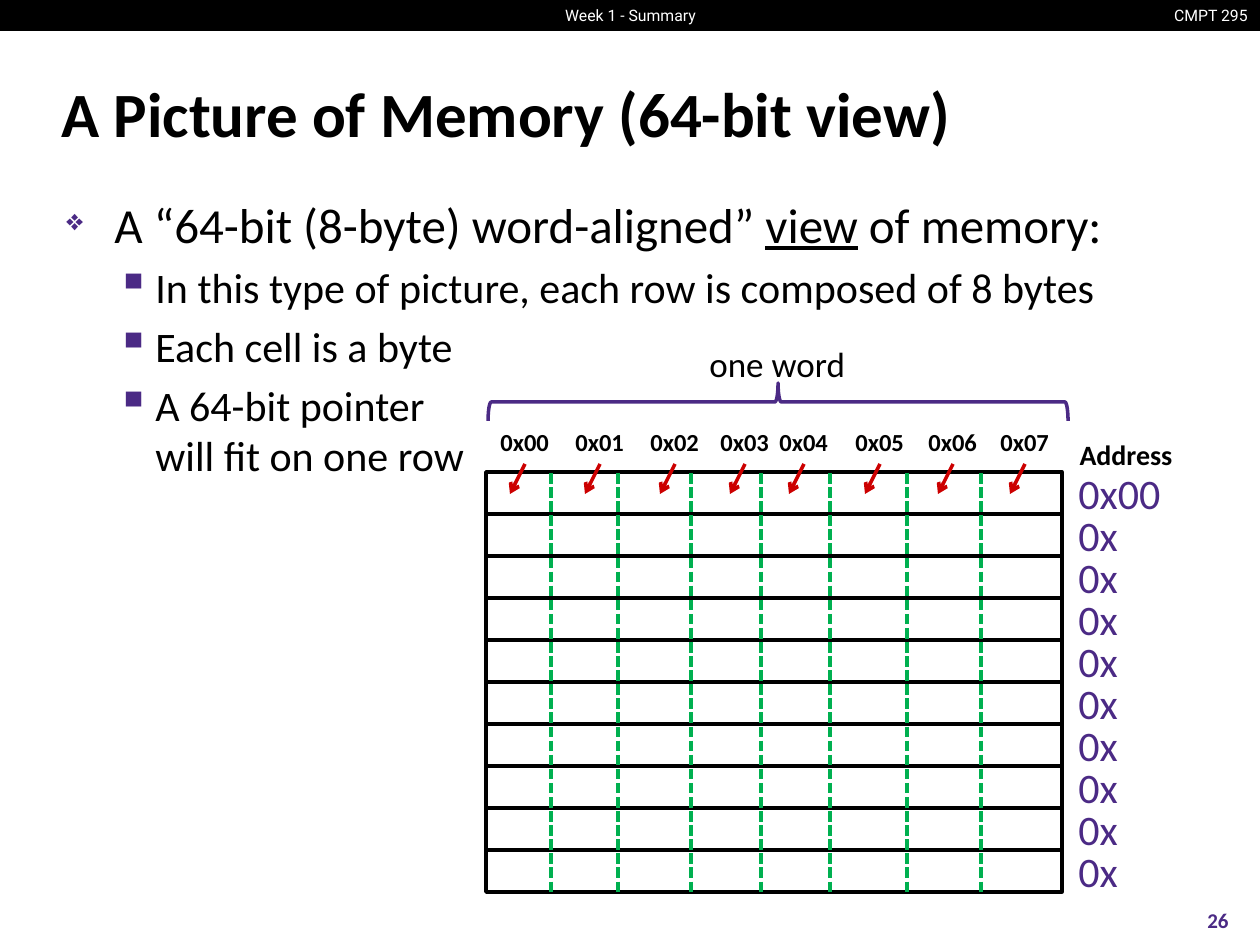
from lxml import etree
from pptx import Presentation
from pptx.dml.color import RGBColor
from pptx.enum.dml import MSO_LINE
from pptx.enum.shapes import MSO_CONNECTOR, MSO_SHAPE
from pptx.enum.text import MSO_ANCHOR, MSO_AUTO_SIZE, PP_ALIGN
from pptx.oxml.ns import qn
from pptx.util import Pt

EMU_PER_PX = 914400 / 126

BLACK = RGBColor(0x00, 0x00, 0x00)
WHITE = RGBColor(0xFF, 0xFF, 0xFF)
PURPLE = RGBColor(0x4B, 0x2A, 0x85)
GREEN = RGBColor(0x00, 0xB0, 0x50)
RED = RGBColor(0xCC, 0x00, 0x00)

LEFT, CENTER, RIGHT = PP_ALIGN.LEFT, PP_ALIGN.CENTER, PP_ALIGN.RIGHT
TOP, MIDDLE = MSO_ANCHOR.TOP, MSO_ANCHOR.MIDDLE
FIT_SHAPE = MSO_AUTO_SIZE.SHAPE_TO_FIT_TEXT
RECTANGLE, BRACE = MSO_SHAPE.RECTANGLE, MSO_SHAPE.LEFT_BRACE
STRAIGHT, SHORT_DASH = MSO_CONNECTOR.STRAIGHT, MSO_LINE.SQUARE_DOT

ROWS, ROW_HEIGHT = 10, 42
DIVIDERS = [65, 132, 205, 275, 344, 421, 495]
OFFSET_LABELS = [2, 77, 152, 222, 281, 357, 430, 502]


def px(length):
    return round(length * EMU_PER_PX)


def emu(box):
    return [px(length) for length in box]


def style(para, size, color, bold=False, align=LEFT, font="Calibri"):
    para.alignment = align
    para.font.name = font
    para.font.size = Pt(size)
    para.font.bold = bold
    para.font.color.rgb = color


def add_label(page, box, text, size, color, anchor=TOP, wrap=False, **look):
    frame = page.shapes.add_textbox(*emu(box)).text_frame
    frame.word_wrap = wrap
    if not wrap:
        frame.auto_size = FIT_SHAPE
    frame.vertical_anchor = anchor
    para = frame.paragraphs[0]
    para.text = text
    style(para, size, color, **look)
    return para


def add_outline(page, kind, box, color, fill=None):
    shape = page.shapes.add_shape(kind, *emu(box))
    shape.shadow.inherit = False
    if fill is None:
        shape.fill.background()
    else:
        shape.fill.solid()
        shape.fill.fore_color.rgb = fill
    shape.line.color.rgb = color
    shape.line.width = Pt(2)
    return shape


def add_line(page, start, end, color, dash=None, arrow=False):
    line = page.shapes.add_connector(STRAIGHT, *emu(start + end))
    line.line.color.rgb = color
    line.line.width = Pt(2)
    if dash is not None:
        line.line.dash_style = dash
    properties = line._element.spPr
    if arrow:
        etree.SubElement(properties.find(qn("a:ln")), qn("a:tailEnd"), type="arrow")
    etree.SubElement(properties, qn("a:effectLst"))


def set_indent(para, margin, hanging):
    properties = para._p.get_or_add_pPr()
    properties.set("marL", str(px(margin)))
    properties.set("indent", str(-px(hanging)))
    return properties


def set_bullet(para, char, percent, margin, hanging):
    properties = set_indent(para, margin, hanging)
    before = etree.SubElement(properties, qn("a:spcBef"))
    etree.SubElement(before, qn("a:spcPct"), val="20000")
    color = etree.SubElement(properties, qn("a:buClr"))
    etree.SubElement(color, qn("a:srgbClr"), val=str(PURPLE))
    etree.SubElement(properties, qn("a:buSzPct"), val=str(percent * 1000))
    etree.SubElement(properties, qn("a:buChar"), char=char)


def add_header(page, box):
    left, top, width, height = box
    bar = add_outline(page, RECTANGLE, box, BLACK, BLACK)
    bar.line.fill.background()
    add_label(page, (left + width - 102, top, 102, height), "CMPT 295",
              9, WHITE, align=RIGHT, font="Roboto")
    add_label(page, (left + width // 2 - 88, top, 177, height), "Week 1 - Summary",
              9, WHITE, align=CENTER, font="Roboto")


def add_body(page, box):
    frame = page.shapes.add_textbox(*emu(box)).text_frame
    frame.word_wrap = True
    lead = frame.paragraphs[0]
    for text in ("A “64-bit (8-byte) word-aligned” ", "view", " of memory:"):
        span = lead.add_run()
        span.text = text
        if text == "view":
            span.font.underline = True
    set_bullet(lead, "❖", 60, 48, 48)
    style(lead, 28, BLACK)

    for text in ("In this type of picture, each row is composed of 8 bytes",
                 "Each cell is a byte",
                 "A 64-bit pointer \vwill fit on one row"):
        para = frame.add_paragraph()
        para.text = text
        para.level = 1
        set_bullet(para, "▪", 110, 89, 39)
        style(para, 24, BLACK)


def add_memory(page, box):
    left, top, width, height = box
    # One rectangle per 8-byte word
    for row in range(ROWS):
        add_outline(page, RECTANGLE, (left, top + row * ROW_HEIGHT, width, ROW_HEIGHT),
                    BLACK, WHITE)
    # Byte borders
    for offset in DIVIDERS:
        x = left + offset
        add_line(page, (x, top + 1), (x, top + height), GREEN, dash=SHORT_DASH)
    # Byte offsets, each pointing into its cell
    for number, offset in enumerate(OFFSET_LABELS):
        x = left + offset
        add_label(page, (x, top - 51, 74, 43), f"0x0{number}", 14, BLACK, bold=True)
        add_line(page, (x + 37, top - 8), (x + 22, top + 22), RED, arrow=True)


def add_word_brace(page, box):
    left, top, width, height = box
    middle_x, middle_y = left + width // 2, top + height // 2
    # A left brace turned to open downwards
    brace = add_outline(page, BRACE, (middle_x - height // 2, middle_y - width // 2,
                                      height, width), PURPLE)
    brace.rotation = 90
    add_label(page, (middle_x - 81, top - 47, 163, 55), "one word", 20, BLACK)


def add_addresses(page, box):
    left, top, width, _ = box
    for row in range(ROWS):
        text, label_width = ("0x00", 108) if row == 0 else ("0x", 66)
        add_label(page, (left, top + 30 + row * ROW_HEIGHT, label_width, 63),
                  text, 24, PURPLE)
    add_label(page, (left, top, width, 47), "Address", 16, BLACK, bold=True, align=CENTER)


def main():
    deck = Presentation()
    deck.slide_width, deck.slide_height = px(1260), px(945)
    page = deck.slides.add_slide(deck.slide_layouts[6])

    add_header(page, (0, 0, 1260, 31))
    title = add_label(page, (49, 60, 1158, 105), "A Picture of Memory (64-bit view)",
                      36, BLACK, anchor=MIDDLE, wrap=True, bold=True)
    set_indent(title, 16, 16)
    add_body(page, (54, 188, 1153, 685))
    add_label(page, (1176, 895, 84, 50), "26", 12, PURPLE,
              anchor=MIDDLE, wrap=True, bold=True, align=CENTER)
    add_memory(page, (486, 472, 576, ROWS * ROW_HEIGHT))
    add_word_brace(page, (488, 383, 580, 38))
    add_addresses(page, (1066, 431, 120, 471))

    deck.save("out.pptx")


if __name__ == "__main__":
    main()
